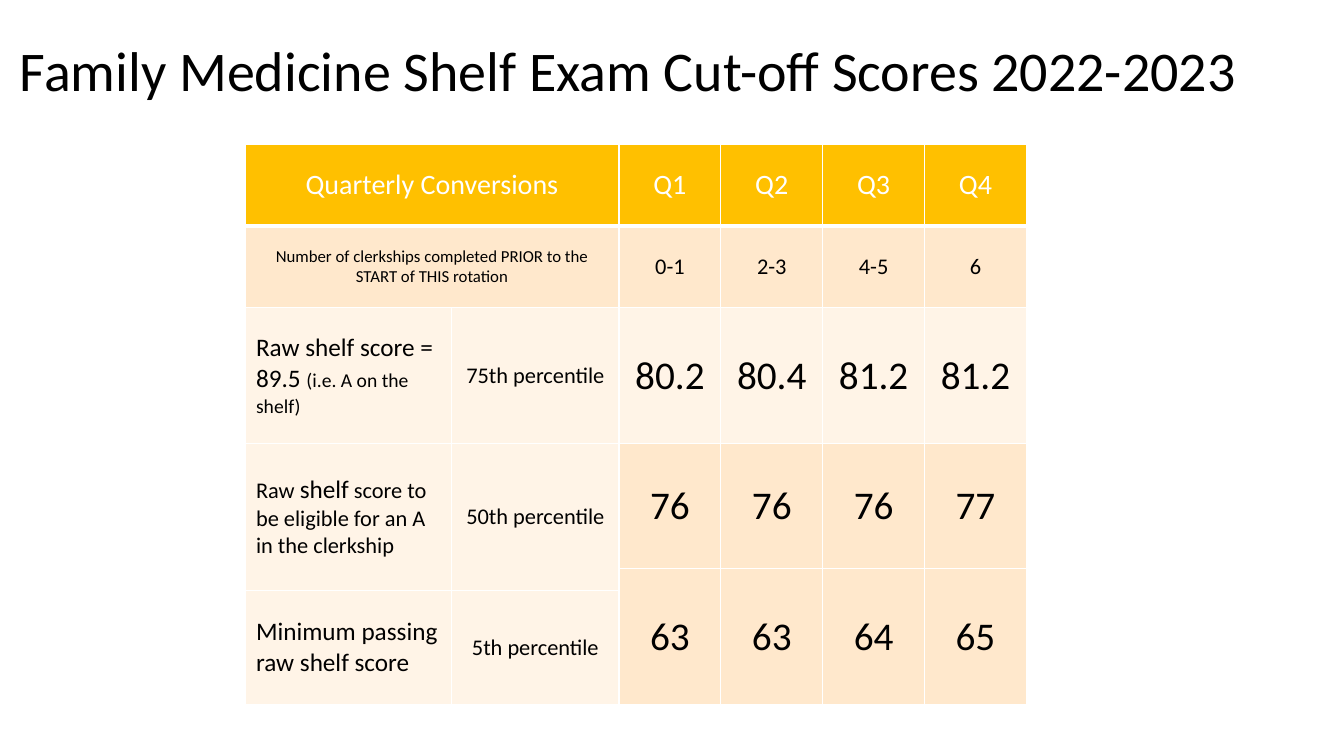
from dataclasses import dataclass

from lxml import etree
from pptx import Presentation
from pptx.dml.color import RGBColor
from pptx.enum.text import MSO_ANCHOR, PP_ALIGN
from pptx.oxml.ns import qn
from pptx.util import Inches, Pt

LEFT, CENTER = PP_ALIGN.LEFT, PP_ALIGN.CENTER
MIDDLE = MSO_ANCHOR.MIDDLE


@dataclass(frozen=True)
class Theme:
    font: str = "Calibri"
    ink: str = "000000"
    white: str = "FFFFFF"
    gold: str = "FFC000"
    peach: str = "FFE8CC"
    cream: str = "FFF4E7"
    title: int = 40
    score: int = 28
    header: int = 20
    label: int = 18
    body: int = 16
    aside: int = 14
    note: int = 12
    border: int = 1
    header_border: int = 3
    text_insets: tuple = (0.11, 0.06, 0.11, 0.06)
    score_insets: tuple = (0.01, 0.01, 0.01, 0)


class SlideBuilder:
    """Places elements in percent of the slide's width and height."""

    def __init__(self, prs, theme):
        self.prs, self.theme = prs, theme
        self.s = prs.slides.add_slide(prs.slide_layouts[6])

    def x(self, share):
        return round(self.prs.slide_width * share / 100)

    def y(self, share):
        return round(self.prs.slide_height * share / 100)

    def add_runs(self, tf, runs, color, align=LEFT):
        p = tf.paragraphs[0]
        p.alignment = align
        for text, size in runs:
            r = p.add_run()
            r.text = text
            r.font.name, r.font.size = self.theme.font, Pt(size)
            r.font.color.rgb = RGBColor.from_string(color)
        return p

    def title(self, text, left, top, width, height):
        sp = self.s.shapes.add_textbox(self.x(left), self.y(top), self.x(width), self.y(height))
        tf = sp.text_frame
        tf.word_wrap, tf.vertical_anchor = True, MIDDLE
        p = self.add_runs(tf, [(text, self.theme.title)], self.theme.ink)
        p.line_spacing = 0.9

    def table(self, left, top, cols, rows):
        frame = self.s.shapes.add_table(len(rows), len(cols), self.x(left), self.y(top),
                                        self.x(sum(cols)), self.y(sum(rows)))
        table = frame.table
        table.first_row = table.horz_banding = False
        for column, share in zip(table.columns, cols):
            column.width = self.x(share)
        for row, share in zip(table.rows, rows):
            row.height = self.y(share)
        return table

    def borders(self, cell, bottom):
        tc_pr = cell._tc.get_or_add_tcPr()
        widths = dict.fromkeys(("lnL", "lnR", "lnT"), self.theme.border) | {"lnB": bottom}
        for side, width in widths.items():
            ln = etree.SubElement(tc_pr, qn(f"a:{side}"), w=str(Pt(width)))
            fill = etree.SubElement(ln, qn("a:solidFill"))
            etree.SubElement(fill, qn("a:srgbClr"), val=self.theme.white)

    def cell(self, table, row, col, runs, fill, span=(1, 1), color=None,
             align=CENTER, insets=None, bottom=None):
        height, width = span
        for i in range(row, row + height):
            for j in range(col, col + width):
                part = table.cell(i, j)
                self.borders(part, bottom or self.theme.border)
                part.fill.solid()
                part.fill.fore_color.rgb = RGBColor.from_string(fill)
        cell = table.cell(row, col)
        if span != (1, 1):
            cell.merge(table.cell(row + height - 1, col + width - 1))
        cell.vertical_anchor = MIDDLE
        (cell.margin_left, cell.margin_top, cell.margin_right,
         cell.margin_bottom) = map(Inches, insets or self.theme.text_insets)
        self.add_runs(cell.text_frame, runs, color or self.theme.ink, align)


def main():
    prs = Presentation()
    prs.slide_width, prs.slide_height = Inches(13.33), Inches(7.5)
    t = Theme()
    b = SlideBuilder(prs, t)

    b.title("Family Medicine Shelf Exam Cut-off Scores 2022-2023", 0.75, 0, 98.5, 19.33)

    # Label and score rows overlap, so the short rows serve as offsets
    table = b.table(18.23, 19.07, [15.38, 12.45] + [7.58] * 4,
                    [10.8, 10.8, 18, 0, 16.53, 2.93, 15.07])

    # Header and clerkship rows
    top_rows = [
        ("Quarterly Conversions", t.header, ["Q1", "Q2", "Q3", "Q4"], t.header,
         t.gold, t.white, t.header_border),
        ("Number of clerkships completed PRIOR to the START of THIS rotation", t.note,
         ["0-1", "2-3", "4-5", "6"], t.body, t.peach, t.ink, t.border),
    ]
    for row, (label, label_size, quarters, size, fill, color, bottom) in enumerate(top_rows):
        style = {"fill": fill, "color": color, "bottom": bottom}
        b.cell(table, row, 0, [(label, label_size)], span=(1, 2), **style)
        for col, text in enumerate(quarters, 2):
            b.cell(table, row, col, [(text, size)], **style)

    # Labels and percentiles: first row, row span, runs, percentile
    labels = [
        (2, 2, [("Raw shelf score = 89.5 ", t.label), ("(i.e. A on the shelf)", t.aside)],
         "75th percentile"),
        (4, 2, [("Raw ", t.body), ("shelf", t.label),
                (" score to be eligible for an A in the clerkship", t.body)],
         "50th percentile"),
        (6, 1, [("Minimum passing raw shelf score", t.label)], "5th percentile"),
    ]
    for row, height, runs, percentile in labels:
        b.cell(table, row, 0, runs, t.cream, (height, 1), align=LEFT)
        b.cell(table, row, 1, [(percentile, t.body)], t.cream, (height, 1))

    # Scores per quarter: first row, row span, fill, values
    scores = [
        (2, 1, t.cream, ["80.2", "80.4", "81.2", "81.2"]),
        (3, 2, t.peach, ["76", "76", "76", "77"]),
        (5, 2, t.peach, ["63", "63", "64", "65"]),
    ]
    for row, height, fill, values in scores:
        for col, value in enumerate(values, 2):
            b.cell(table, row, col, [(value, t.score)], fill, (height, 1),
                   insets=t.score_insets)

    prs.save("out.pptx")


if __name__ == "__main__":
    main()
